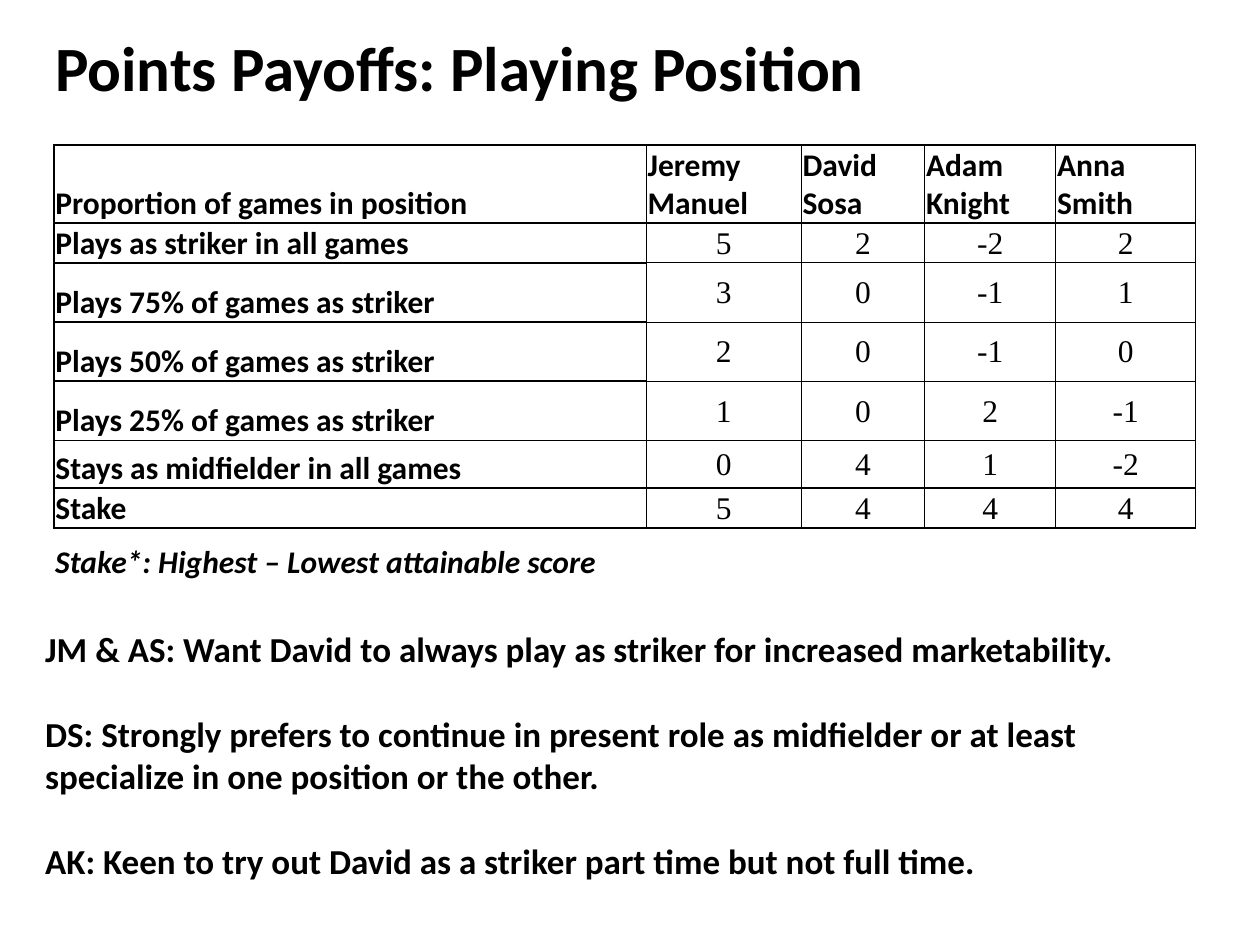
from lxml.etree import SubElement as Sub
from pptx import Presentation
from pptx.dml.color import RGBColor as Rgb
from pptx.enum.text import MSO_ANCHOR as Anchor, PP_ALIGN as Align
from pptx.oxml.ns import qn
from pptx.util import Inches, Pt

COLORS = {"ink": "000000"}
BOLD = {"name": "Calibri", "bold": True}
PLAIN = {"name": "Times New Roman", "bold": False}


def write(para, text, form):
    run = para.add_run()
    run.text = text
    for key, val in form.items():
        setattr(run.font, key, val)
    run.font.color.rgb = Rgb.from_string(COLORS["ink"])


def edge(cell, side, width):
    line = Sub(cell._tc.get_or_add_tcPr(), qn(f"a:ln{side}"), w=str(Pt(width)))
    fill = Sub(line, qn("a:solidFill"))
    Sub(fill, qn("a:srgbClr"), val=COLORS["ink"])


deck = Presentation()
deck.slide_width, deck.slide_height = Inches(10), Inches(7.5)
slide = deck.slides.add_slide(deck.slide_layouts[6])

rows = [
    ("Proportion of games in position", "Jeremy Manuel", "David Sosa", "Adam Knight", "Anna Smith"),
    ("Plays as striker in all games", "5", "2", "-2", "2"),
    ("Plays 75% of games as striker", "3", "0", "-1", "1"),
    ("Plays 50% of games as striker", "2", "0", "-1", "0"),
    ("Plays 25% of games as striker", "1", "0", "2", "-1"),
    ("Stays as midfielder in all games", "0", "4", "1", "-2"),
    ("Stake", "5", "4", "4", "4"),
]
wide = [4.7, 1.23, 0.98, 1.04, 1.11]
high = [0.61, 0.31, 0.47, 0.47, 0.47, 0.38, 0.31]
inset = {"margin_left": 0.01, "margin_right": 0.01, "margin_top": 0.01, "margin_bottom": 0}

frame = slide.shapes.add_table(
    len(rows), len(wide), Inches(0.43), Inches(1.15), Inches(sum(wide)), Inches(sum(high))
)
table = frame.table
table.first_row = table.horz_banding = False
for col, width in zip(table.columns, wide):
    col.width = Inches(width)
for row, height in zip(table.rows, high):
    row.height = Inches(height)

for r, row in enumerate(rows):
    for c, text in enumerate(row):
        cell = table.cell(r, c)
        for key, val in inset.items():
            setattr(cell, key, Inches(val))
        label = r == 0 or c == 0
        cell.vertical_anchor = Anchor.BOTTOM if label else Anchor.MIDDLE
        para = cell.text_frame.paragraphs[0]
        para.alignment = Align.LEFT if label else Align.CENTER
        write(para, text, {**(BOLD if label else PLAIN), "size": Pt(18)})
        thick = {"L": c < 2, "R": c in (0, 4), "T": r in (0, 1, 6), "B": r in (0, 5, 6)}
        for side, heavy in thick.items():
            edge(cell, side, 1 if c == 0 or heavy else 0.5)
        cell.fill.background()

notes = [
    "JM & AS: Want David to always play as striker for increased marketability.",
    "DS: Strongly prefers to continue in present role as midfielder or at least "
    "specialize in one position or the other.",
    "AK: Keen to try out David as a striker part time but not full time.",
]
boxes = [
    ((-0.85, -0.1, 9, 1.25), ["Points Payoffs: Playing Position"], Align.CENTER, {"size": Pt(36)}),
    ((0.26, 5.32, 9.22, 1.34), notes, Align.LEFT, {"size": Pt(20)}),
    ((0.34, 3.83, 9.07, 1.25), ["Stake*: Highest – Lowest attainable score"], Align.LEFT,
     {"size": Pt(18), "italic": True}),
]
for place, lines, align, form in boxes:
    body = slide.shapes.add_textbox(*map(Inches, place)).text_frame
    body.word_wrap = True
    body.vertical_anchor = Anchor.MIDDLE
    for i, text in enumerate(lines):
        para = body.add_paragraph() if i else body.paragraphs[0]
        para.alignment = align
        para.space_before = Pt(24.4 if i else 0)
        write(para, text, {**BOLD, **form})

deck.save("out.pptx")
